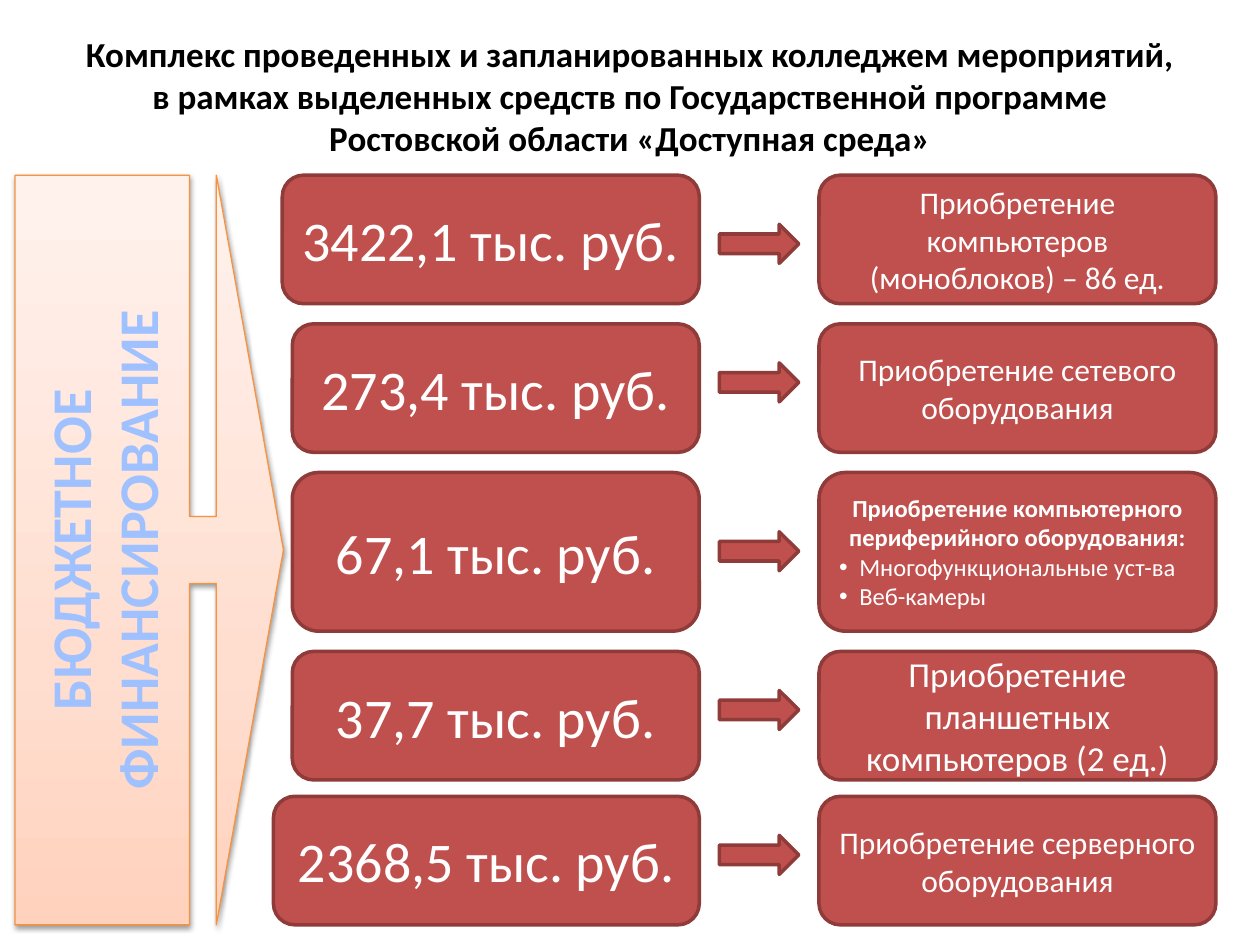
from lxml.etree import SubElement
from pptx import Presentation
from pptx.dml.color import RGBColor
from pptx.enum.shapes import MSO_SHAPE
from pptx.enum.text import MSO_ANCHOR, PP_ALIGN
from pptx.oxml import parse_xml
from pptx.oxml.ns import nsdecls, qn
from pptx.util import Inches, Pt

COLORS = {"red": "C0504D", "dark_red": "8E3B39", "orange": "F69240",
          "blue": "A0C1FF", "white": "FFFFFF", "black": "000000"}
GRADIENT = [(0, "FFD2BD"), (35, "FFDED0"), (100, "FFF2ED")]

TITLE = ("Комплекс проведенных и запланированных колледжем мероприятий,\v"
         "в рамках выделенных средств по Государственной программе\v"
         "Ростовской области «Доступная среда»")
FUNDING = "БЮДЖЕТНОЕ ФИНАНСИРОВАНИЕ"

# Amount, left edge of its box, row top, row height, arrow top, purchase, text size, list
ROWS = [
    ("3422,1 тыс. руб.", 2.24, 1.39, 1.02, 1.78,
     "Приобретение компьютеров (моноблоков) – 86 ед.", 18, []),
    ("273,4 тыс. руб.", 2.32, 2.57, 1.02, 2.88,
     "Приобретение сетевого оборудования", 18, []),
    ("67,1 тыс. руб.", 2.32, 3.75, 1.26, 4.22,
     "Приобретение компьютерного периферийного оборудования:", 14,
     ["Многофункциональные уст-ва", "Веб-камеры"]),
    ("37,7 тыс. руб.", 2.32, 5.17, 1.02, 5.48,
     "Приобретение планшетных компьютеров (2 ед.)", 20, []),
    ("2368,5 тыс. руб.", 2.17, 6.32, 1.02, 6.63,
     "Приобретение серверного оборудования", 18, []),
]
AMOUNT_RIGHT = 5.55
ARROW_LEFT, ARROW_WIDTH, ARROW_HEIGHT = 5.71, 0.63, 0.31
PURCHASE_LEFT, PURCHASE_WIDTH = 6.5, 3.15


def rgb(name):
    return RGBColor.from_string(COLORS[name])


def write(paragraph, text, size=18, color="white", bold=False, bullet=False):
    paragraph.text = text
    paragraph.alignment = PP_ALIGN.LEFT if bullet else PP_ALIGN.CENTER
    for run in paragraph.runs:
        run.font.name = "Calibri"
        run.font.size = Pt(size)
        run.font.bold = bold
        run.font.color.rgb = rgb(color)
    if bullet:
        properties = paragraph._p.get_or_add_pPr()
        properties.set("marL", str(Inches(0.16)))
        properties.set("indent", str(-Inches(0.16)))
        SubElement(properties, qn("a:buFont"), typeface="Arial")
        SubElement(properties, qn("a:buChar"), char="•")


def add_block(slide, kind, left, top, width, height, line="dark_red", line_width=2):
    shape = slide.shapes.add_shape(
        kind, Inches(left), Inches(top), Inches(width), Inches(height))
    shape.shadow.inherit = False
    shape.fill.solid()
    shape.fill.fore_color.rgb = rgb("red")
    shape.line.color.rgb = rgb(line)
    shape.line.width = Pt(line_width)
    shape.text_frame.word_wrap = True
    shape.text_frame.vertical_anchor = MSO_ANCHOR.MIDDLE
    return shape


def add_funding_callout(slide):
    callout = add_block(slide, MSO_SHAPE.RIGHT_ARROW_CALLOUT, 0.12, 1.39, 2.13, 5.95,
                        line="orange", line_width=0.75)
    for index, value in enumerate((0.25, 1.4, 0.25, 0.65)):
        callout.adjustments[index] = value
    write(callout.text_frame.paragraphs[0], FUNDING, size=32, color="blue", bold=True)
    callout.text_frame._txBody.bodyPr.set("vert", "vert270")

    # Three-stop gradient and soft shadow
    properties = callout._element.spPr
    stops = "".join(f'<a:gs pos="{position * 1000}"><a:srgbClr val="{color}"/></a:gs>'
                    for position, color in GRADIENT)
    gradient = parse_xml(f'<a:gradFill {nsdecls("a")}><a:gsLst>{stops}</a:gsLst>'
                         '<a:lin ang="16200000" scaled="0"/></a:gradFill>')
    properties.replace(properties.find(qn("a:solidFill")), gradient)
    shadow = parse_xml(
        f'<a:outerShdw {nsdecls("a")} blurRad="{Pt(3.1)}" dist="{Pt(1.6)}" dir="5400000" '
        f'rotWithShape="0"><a:srgbClr val="{COLORS["black"]}"><a:alpha val="38000"/>'
        '</a:srgbClr></a:outerShdw>')
    properties.find(qn("a:effectLst")).append(shadow)


def main():
    presentation = Presentation()
    presentation.slide_width, presentation.slide_height = Inches(10), Inches(7.5)
    slide = presentation.slides.add_slide(presentation.slide_layouts[6])

    # Title
    title = slide.shapes.add_textbox(Inches(0), Inches(0.21), Inches(10), Inches(0.99))
    title.text_frame.word_wrap = True
    write(title.text_frame.paragraphs[0], TITLE, size=20, color="black", bold=True)

    # Source of funding
    add_funding_callout(slide)

    # Rows: amount, arrow, purchase
    for amount, left, top, height, arrow_top, purchase, size, items in ROWS:
        amount_box = add_block(slide, MSO_SHAPE.ROUNDED_RECTANGLE,
                               left, top, AMOUNT_RIGHT - left, height)
        write(amount_box.text_frame.paragraphs[0], amount, size=32)
        add_block(slide, MSO_SHAPE.RIGHT_ARROW,
                  ARROW_LEFT, arrow_top, ARROW_WIDTH, ARROW_HEIGHT)
        purchase_box = add_block(slide, MSO_SHAPE.ROUNDED_RECTANGLE,
                                 PURCHASE_LEFT, top, PURCHASE_WIDTH, height)
        frame = purchase_box.text_frame
        write(frame.paragraphs[0], purchase, size=size, bold=bool(items))
        for item in items:
            write(frame.add_paragraph(), item, size=size, bullet=True)

    presentation.save("out.pptx")


if __name__ == "__main__":
    main()
